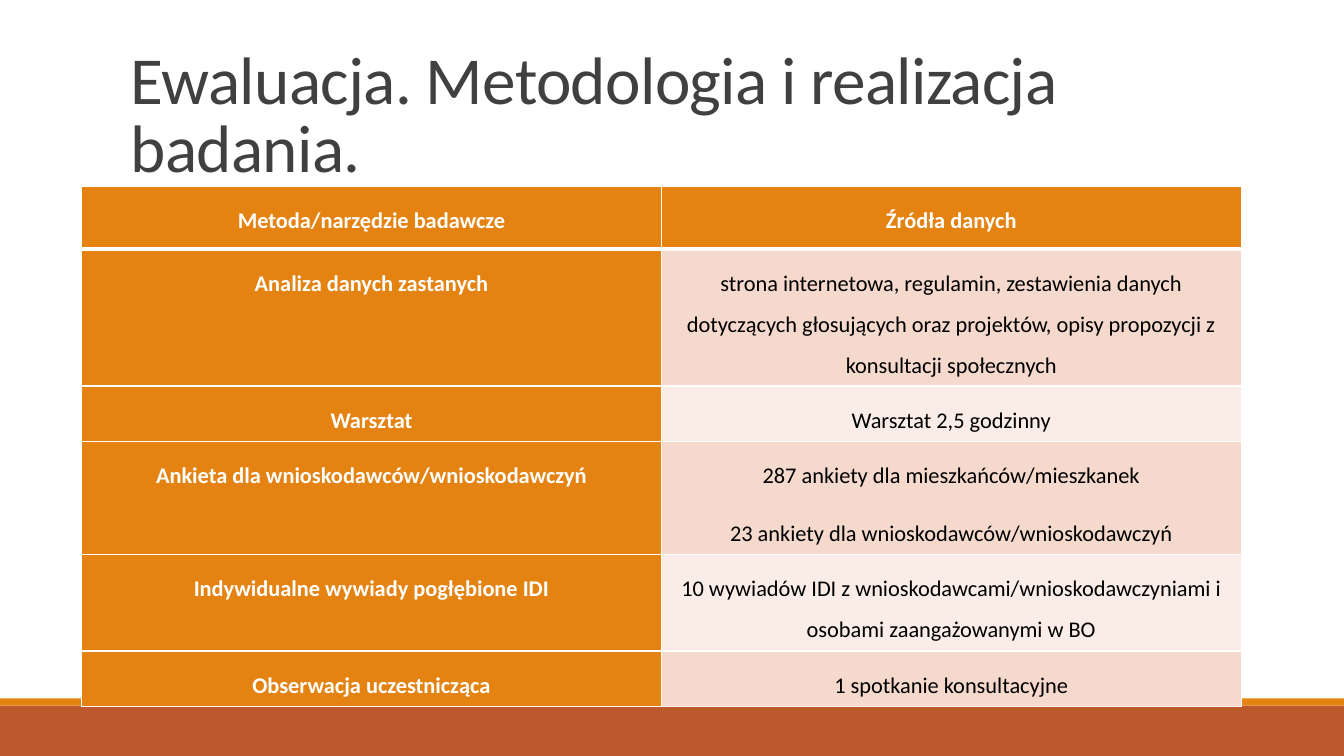
"""Build the slide on evaluation methods and data sources."""
from lxml.etree import SubElement
from pptx import Presentation
from pptx.dml.color import RGBColor
from pptx.enum.shapes import MSO_SHAPE as Shape
from pptx.enum.text import MSO_ANCHOR as Anchor, PP_ALIGN as Align
from pptx.oxml.ns import qn
from pptx.util import Inches, Pt

WHITE = RGBColor(0xFF, 0xFF, 0xFF)
BLACK = RGBColor(0, 0, 0)
GREY = RGBColor(0x40, 0x40, 0x40)
ORANGE = RGBColor(0xE4, 0x83, 0x12)
RUST = RGBColor(0xBD, 0x58, 0x2C)
BANDS = (RGBColor(0xF5, 0xD9, 0xCC), RGBColor(0xFA, 0xED, 0xE7))

TITLE = "Ewaluacja. Metodologia i realizacja badania."
METHODS = [
    ("Metoda/narzędzie badawcze", ["Źródła danych"], 0.62),
    ("Analiza danych zastanych",
     ["strona internetowa, regulamin, zestawienia danych dotyczących głosujących "
      "oraz projektów, opisy propozycji z konsultacji społecznych"], 1.36),
    ("Warsztat", ["Warsztat 2,5 godzinny"], 0.55),
    ("Ankieta dla wnioskodawców/wnioskodawczyń",
     ["287 ankiety dla mieszkańców/mieszkanek",
      "23 ankiety dla wnioskodawców/wnioskodawczyń"], 1.12),
    ("Indywidualne wywiady pogłębione IDI",
     ["10 wywiadów IDI z wnioskodawcami/wnioskodawczyniami "
      "i osobami zaangażowanymi w BO"], 0.96),
    ("Obserwacja uczestnicząca", ["1 spotkanie konsultacyjne"], 0.55),
]


def write(frame, lines, size=16, color=BLACK, bold=False, align=Align.CENTER,
          spacing=1.5, before=12, tracking=None):
    for index, line in enumerate(lines):
        para = frame.add_paragraph() if index else frame.paragraphs[0]
        para.alignment = align
        para.line_spacing = spacing
        para.space_before = Pt(before)
        span = para.add_run()
        span.text = line
        span.font.name = "Calibri"
        span.font.size = Pt(size)
        span.font.bold = bold
        span.font.color.rgb = color
        if tracking:
            span.font._element.set("spc", str(tracking))


class Sheet:
    def __init__(self, page):
        self.page = page

    def band(self, top, height, color):
        box = self.page.shapes.add_shape(
            Shape.RECTANGLE, 0, Inches(top), Inches(13.33), Inches(height))
        box.shadow.inherit = False
        box.fill.solid()
        box.fill.fore_color.rgb = color
        box.line.fill.background()

    def title(self, text):
        box = self.page.shapes.add_textbox(
            Inches(1.2), Inches(0.31), Inches(11), Inches(1.59))
        box.text_frame.word_wrap = True
        box.text_frame.vertical_anchor = Anchor.BOTTOM
        write(box.text_frame, [text], size=48, color=GREY, align=Align.LEFT,
              spacing=0.85, before=0, tracking=-50)

    def borders(self, cell, top, bottom):
        properties = cell._tc.get_or_add_tcPr()
        for side, width in (("L", 1), ("R", 1), ("T", top), ("B", bottom)):
            line = SubElement(properties, qn(f"a:ln{side}"), w=str(Pt(width)))
            fill = SubElement(line, qn("a:solidFill"))
            SubElement(fill, qn("a:srgbClr"), val=str(WHITE))

    def cell(self, cell, lines, fill, top, bottom, **style):
        self.borders(cell, top, bottom)
        cell.fill.solid()
        cell.fill.fore_color.rgb = fill
        cell.margin_left = cell.margin_right = Inches(0.07)
        cell.margin_top = cell.margin_bottom = Inches(0.07)
        write(cell.text_frame, lines, **style)

    def table(self, rows):
        total = sum(height for *_, height in rows)
        grid = self.page.shapes.add_table(
            len(rows), 2, Inches(0.81), Inches(1.85), Inches(11.5), Inches(total)).table
        strong = {"color": WHITE, "bold": True}
        for index, (method, sources, height) in enumerate(rows):
            grid.rows[index].height = Inches(height)
            top = 3 if index == 1 else 1
            bottom = 3 if index == 0 else 1
            self.cell(grid.cell(index, 0), [method], ORANGE, top, bottom, **strong)
            fill, style = (BANDS[(index - 1) % 2], {}) if index else (ORANGE, strong)
            self.cell(grid.cell(index, 1), sources, fill, top, bottom, **style)


def main():
    deck = Presentation()
    deck.slide_width, deck.slide_height = Inches(13.33), Inches(7.5)
    sheet = Sheet(deck.slides.add_slide(deck.slide_layouts[6]))
    sheet.band(7, 0.5, RUST)
    sheet.band(6.93, 0.07, ORANGE)
    sheet.title(TITLE)
    sheet.table(METHODS)
    deck.save("out.pptx")


if __name__ == "__main__":
    main()
